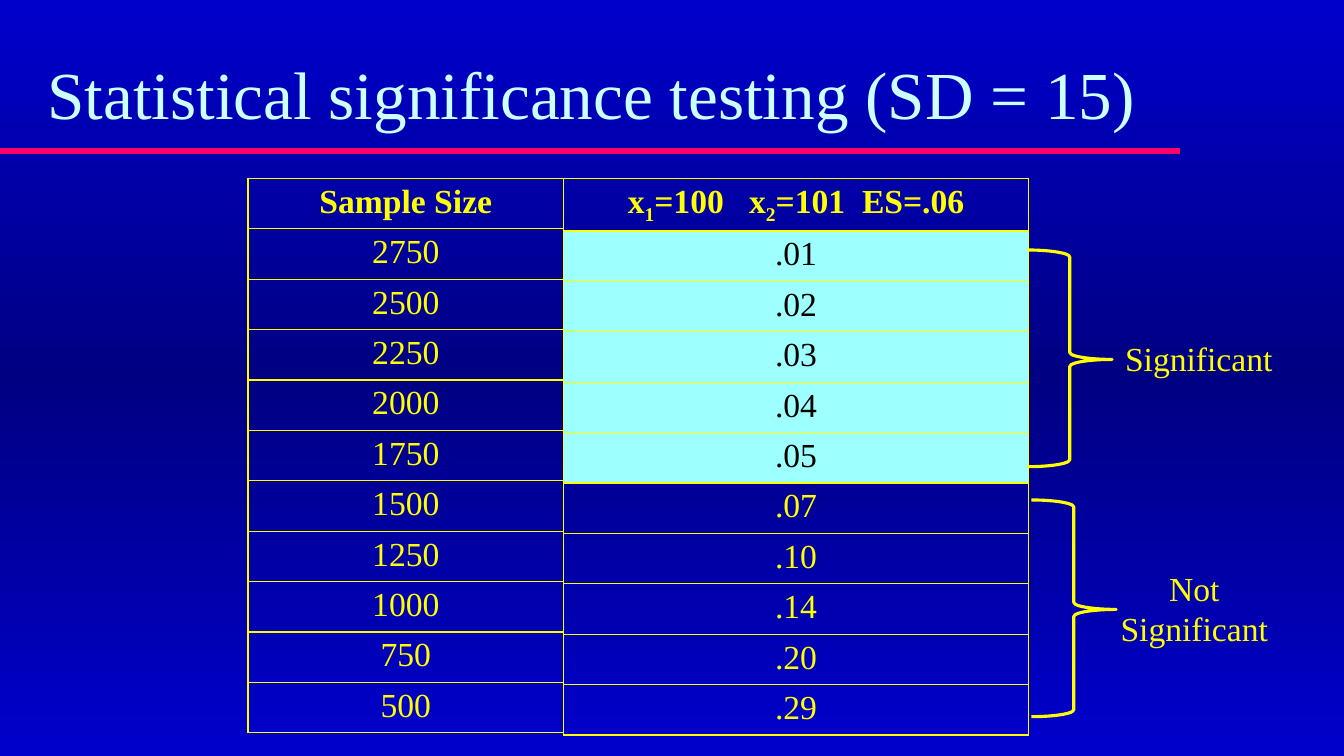
from copy import deepcopy
from dataclasses import dataclass

from lxml import etree
from pptx import Presentation
from pptx.dml.color import RGBColor
from pptx.enum.shapes import MSO_CONNECTOR, MSO_SHAPE
from pptx.enum.text import MSO_ANCHOR, MSO_AUTO_SIZE, PP_ALIGN
from pptx.oxml.ns import qn
from pptx.util import Inches, Pt

LEFT, CENTER = PP_ALIGN.LEFT, PP_ALIGN.CENTER
BOTTOM = MSO_ANCHOR.BOTTOM
NO_AUTOFIT = MSO_AUTO_SIZE.NONE
STRAIGHT = MSO_CONNECTOR.STRAIGHT
LEFT_BRACE = MSO_SHAPE.LEFT_BRACE
TITLE_ONLY = 5


@dataclass(frozen=True)
class Theme:
    font: str = "Times New Roman"
    title_size: int = 48
    body_size: int = 24
    title: str = "CCFFFF"
    text: str = "FFFF00"
    highlight: str = "9EFFFF"
    highlight_text: str = "000000"
    rule: str = "FF0066"
    background: tuple = ("0000CC", "000082", "0000CC")
    rule_width: float = 4
    brace_width: float = 2.25
    border_width: float = 1


class SlideBuilder:
    def __init__(self, presentation, theme):
        self.theme = theme
        self.slide = presentation.slides.add_slide(presentation.slide_layouts[TITLE_ONLY])
        self.shapes = self.slide.shapes

    def background(self):
        fill = self.slide.background.fill
        fill.gradient()
        fill.gradient_angle = 270
        stop_list = self.slide.element.find(".//" + qn("a:gsLst"))
        stop_list.append(deepcopy(stop_list[0]))
        for index, (stop, color) in enumerate(zip(fill.gradient_stops, self.theme.background)):
            stop.position = index / 2
            stop.color.rgb = RGBColor.from_string(color)

    def format_text(self, text_frame, size, color, alignment, bold=False):
        for paragraph in text_frame.paragraphs:
            paragraph.alignment = alignment
            for run in paragraph.runs:
                run.font.name = self.theme.font
                run.font.size = Pt(size)
                run.font.bold = bold
                run.font.color.rgb = RGBColor.from_string(color)

    def title(self, text, left, top, width, height):
        shape = self.shapes.title
        shape.left, shape.top = Inches(left), Inches(top)
        shape.width, shape.height = Inches(width), Inches(height)
        text_frame = shape.text_frame
        text_frame.text = text
        text_frame.vertical_anchor = BOTTOM
        text_frame.auto_size = NO_AUTOFIT
        self.format_text(text_frame, self.theme.title_size, self.theme.title, LEFT)

    def rule(self, left, right, top):
        connector = self.shapes.add_connector(
            STRAIGHT, Inches(left), Inches(top), Inches(right), Inches(top))
        connector.line.color.rgb = RGBColor.from_string(self.theme.rule)
        connector.line.width = Pt(self.theme.rule_width)
        etree.SubElement(connector.element.spPr, qn("a:effectLst"))

    def border(self, cell):
        properties = cell._tc.get_or_add_tcPr()
        for index, side in enumerate(("lnL", "lnR", "lnT", "lnB")):
            line = etree.Element(qn("a:" + side), w=str(Pt(self.theme.border_width)))
            fill = etree.SubElement(line, qn("a:solidFill"))
            etree.SubElement(fill, qn("a:srgbClr"), val=self.theme.text)
            properties.insert(index, line)

    def column_table(self, header, values, left, top, width, header_height, row_height,
                     highlighted=0):
        count = len(values) + 1
        table = self.shapes.add_table(
            count, 1, Inches(left), Inches(top), Inches(width),
            Inches(header_height + row_height * len(values))).table
        table.first_row = table.horz_banding = False
        for index in range(count):
            table.rows[index].height = Inches(row_height if index else header_height)
            cell = table.cell(index, 0)
            if index:
                cell.text_frame.text = values[index - 1]
            else:
                for text, subscript in header:
                    run = cell.text_frame.paragraphs[0].add_run()
                    run.text = text
                    if subscript:
                        run._r.get_or_add_rPr().set("baseline", "-25000")
            color = self.theme.text
            if 1 <= index <= highlighted:
                color = self.theme.highlight_text
                cell.fill.solid()
                cell.fill.fore_color.rgb = RGBColor.from_string(self.theme.highlight)
            else:
                cell.fill.background()
            self.format_text(cell.text_frame, self.theme.body_size, color, CENTER, index == 0)
            self.border(cell)

    def brace(self, left, top, width, height):
        shape = self.shapes.add_shape(
            LEFT_BRACE, Inches(left), Inches(top), Inches(width), Inches(height))
        shape.rotation = 180
        shape.adjustments[0] = 0.083
        shape.adjustments[1] = 0.495
        shape.shadow.inherit = False
        shape.fill.background()
        shape.line.color.rgb = RGBColor.from_string(self.theme.text)
        shape.line.width = Pt(self.theme.brace_width)

    def label(self, text, left, top, width, height, alignment):
        text_frame = self.shapes.add_textbox(
            Inches(left), Inches(top), Inches(width), Inches(height)).text_frame
        text_frame.word_wrap = True
        text_frame.text = text
        self.format_text(text_frame, self.theme.body_size, self.theme.text, alignment)


def main():
    presentation = Presentation()
    presentation.slide_width = Inches(13.33)
    presentation.slide_height = Inches(7.5)

    builder = SlideBuilder(presentation, Theme())
    builder.background()
    builder.rule(0, 11.7, 1.5)
    builder.title("Statistical significance testing (SD = 15)", 0.37, 0.48, 11.93, 0.89)

    sample_sizes = [str(size) for size in range(2750, 1000, -250)] + ["1000", "750", "500"]
    p_values = [".01", ".02", ".03", ".04", ".05", ".07", ".10", ".14", ".20", ".29"]
    effect_header = [("x", False), ("1", True), ("=100   x", False), ("2", True),
                     ("=101  ES=.06", False)]
    builder.column_table([("Sample Size", False)], sample_sizes, 2.46, 1.77, 3.13, 0.5, 0.5)
    builder.column_table(effect_header, p_values, 5.59, 1.77, 4.61, 0.46, 0.5, highlighted=5)

    for left, top in ((10.19, 2.48), (10.23, 4.96)):
        builder.brace(left, top, 0.84, 2.15)
    builder.label("Significant", 11.06, 3.3, 1.67, 0.5, LEFT)
    builder.label("Not\nSignificant", 11.01, 5.58, 1.67, 0.91, CENTER)

    presentation.save("out.pptx")


if __name__ == "__main__":
    main()
